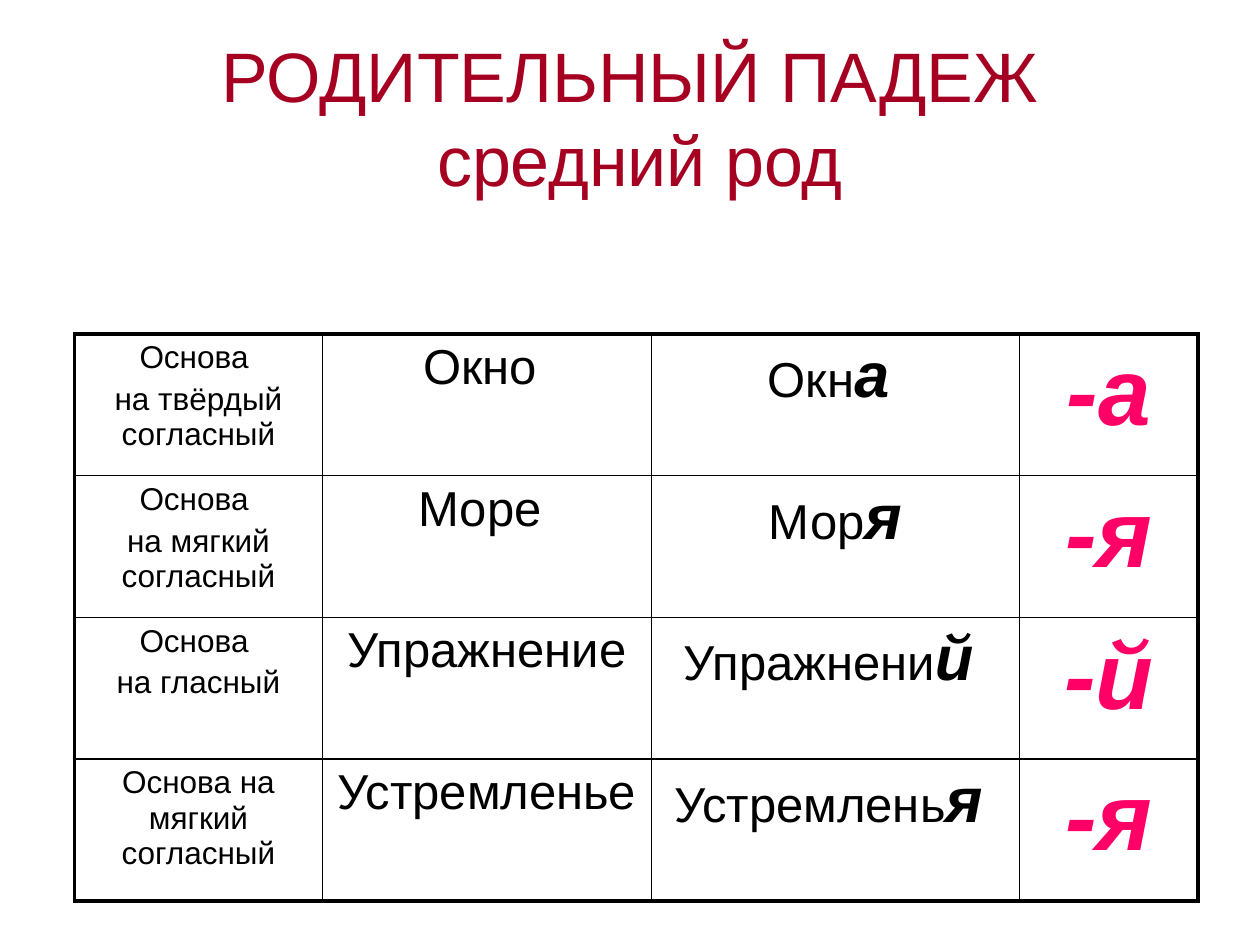
from typing import NamedTuple

from lxml import etree
from pptx import Presentation
from pptx.dml.color import RGBColor
from pptx.enum import text
from pptx.oxml import ns
from pptx.util import Inches, Pt

FONT = "Arial"
CRIMSON = RGBColor(0xA5, 0x00, 0x21)
PINK = RGBColor(0xFF, 0x00, 0x66)
BLACK = RGBColor(0x00, 0x00, 0x00)
THIN, THICK = 1, 2.25
COLUMN_WIDTHS = (1.97, 2.61, 2.92, 1.42)
ROW_HEIGHT = 1.125


class Style(NamedTuple):
    size: float
    color: RGBColor = BLACK
    strong: bool = False


TITLE = Style(40, CRIMSON)
LABEL = Style(18)
WORD = Style(28)
ENDING = Style(36, strong=True)
SUFFIX = Style(54, PINK, strong=True)


class Declension(NamedTuple):
    stem_type: tuple[str, ...]
    nominative: str
    genitive_stem: str
    ending: str
    tail: str = " "


DECLENSIONS = (
    Declension(("Основа ", "на твёрдый согласный"), "Окно ", "Окн", "а"),
    Declension(("Основа ", "на мягкий согласный"), "Море ", "Мор", "я", ""),
    Declension(("Основа ", "на гласный"), "Упражнение", "Упражнени", "й"),
    Declension(("Основа на мягкий согласный",), "Устремленье ", "Устремлень", "я"),
)


def add_span(para, wording: str, style: Style) -> None:
    span = para.add_run()
    span.text = wording
    font = span.font
    font.name = FONT
    font.size = Pt(style.size)
    font.bold = font.italic = style.strong
    font.color.rgb = style.color


def set_space_before(para, percent: int) -> None:
    """Set spacing relative to the text size."""
    properties = para._p.get_or_add_pPr()
    spacing = etree.SubElement(properties, ns.qn("a:spcBef"))
    etree.SubElement(spacing, ns.qn("a:spcPct"), val=str(percent * 1000))


def fill_cell(cell, paragraphs) -> None:
    """Write paragraphs, each a list of (wording, style) pairs."""
    cell.fill.background()
    frame = cell.text_frame
    for index, spans in enumerate(paragraphs):
        para = frame.add_paragraph() if index else frame.paragraphs[0]
        para.alignment = text.PP_ALIGN.CENTER
        set_space_before(para, 20)
        for wording, style in spans:
            if wording:
                add_span(para, wording, style)


def set_borders(cell, widths: dict[str, float]) -> None:
    properties = cell._tc.get_or_add_tcPr()
    for index, (side, width) in enumerate(widths.items()):
        line = etree.Element(ns.qn(f"a:ln{side}"), w=str(int(Pt(width))))
        fill = etree.SubElement(line, ns.qn("a:solidFill"))
        etree.SubElement(fill, ns.qn("a:srgbClr"), val=str(BLACK))
        properties.insert(index, line)


def add_title(page) -> None:
    title = page.shapes.title
    title.left, title.top = Inches(0.5), Inches(0.3)
    title.width, title.height = Inches(9), Inches(1.25)
    frame = title.text_frame
    frame.vertical_anchor = text.MSO_ANCHOR.MIDDLE
    para = frame.paragraphs[0]
    para.alignment = text.PP_ALIGN.CENTER
    add_span(para, "РОДИТЕЛЬНЫЙ ПАДЕЖ", TITLE)
    para.add_line_break()
    add_span(para, " средний род", TITLE)


def add_declension_table(page) -> None:
    row_count, column_count = len(DECLENSIONS), len(COLUMN_WIDTHS)
    table = page.shapes.add_table(
        row_count, column_count, Inches(0.59), Inches(2.65),
        Inches(sum(COLUMN_WIDTHS)), Inches(ROW_HEIGHT * row_count),
    ).table
    table.first_row = table.horz_banding = False
    for column, width in zip(table.columns, COLUMN_WIDTHS):
        column.width = Inches(width)
    for r, entry in enumerate(DECLENSIONS):
        table.rows[r].height = Inches(ROW_HEIGHT)
        contents = (
            [[(line, LABEL)] for line in entry.stem_type],
            [[(entry.nominative, WORD)]],
            [[(entry.genitive_stem, WORD), (entry.ending, ENDING), (entry.tail, WORD)]],
            [[("-" + entry.ending, SUFFIX)]],
        )
        for c, paragraphs in enumerate(contents):
            cell = table.cell(r, c)
            fill_cell(cell, paragraphs)
            set_borders(cell, {
                "L": THICK if c == 0 else THIN,
                "R": THICK if c == column_count - 1 else THIN,
                "T": THICK if r == 0 else THIN,
                "B": THICK if r == row_count - 1 else THIN,
            })


def main() -> None:
    deck = Presentation()
    deck.slide_width, deck.slide_height = Inches(10), Inches(7.5)
    page = deck.slides.add_slide(deck.slide_layouts.get_by_name("Title Only"))
    add_title(page)
    add_declension_table(page)
    deck.save("out.pptx")


if __name__ == "__main__":
    main()
